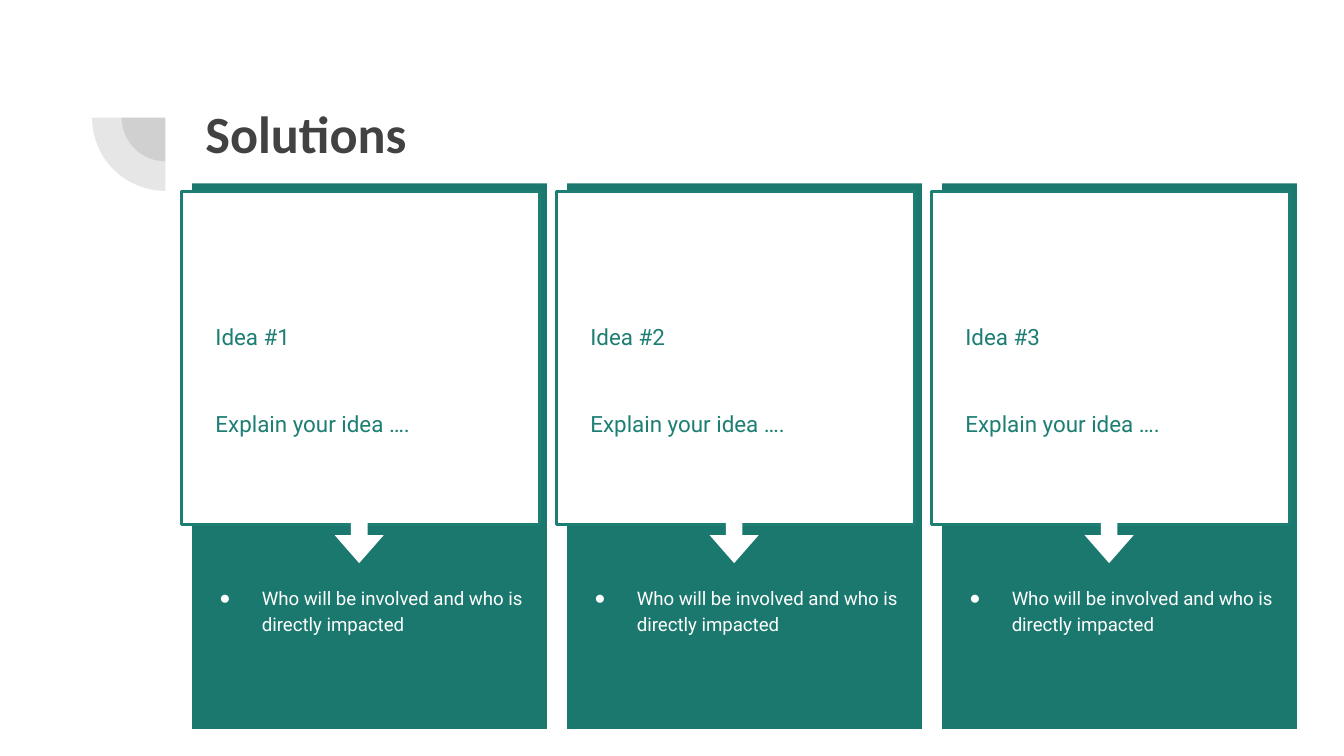
from lxml import etree
from pptx import Presentation
from pptx import util as u
from pptx.dml.color import RGBColor
from pptx.enum import shapes, text
from pptx.oxml.ns import qn

PX = 4572  # EMU per px, 200 px to the inch
COLORS = {"ink": "424242", "panel": "1B786E", "accent": "1D7E74", "white": "FFFFFF"}
KIND = shapes.MSO_SHAPE

deck = Presentation()
deck.slide_width, deck.slide_height = 2000 * PX, 1125 * PX
slide = deck.slides.add_slide(deck.slide_layouts[6])


def add_block(kind, box, fill, border=None, adjustments=()):
    block = slide.shapes.add_shape(kind, *(n * PX for n in box))
    block.shadow.inherit = False
    block.fill.solid()
    block.fill.fore_color.rgb = RGBColor.from_string(COLORS[fill])
    if border:
        block.line.color.rgb = RGBColor.from_string(COLORS[border])
        block.line.width = u.Pt(1.5)
    else:
        block.line.fill.background()
    for i, value in enumerate(adjustments):
        block.adjustments[i] = value
    return block


def add_words(words, box, color, spacing=1.0, **font):
    """Add a wrapped, top-anchored text box and return its paragraph."""
    frame = slide.shapes.add_textbox(*(n * PX for n in box)).text_frame
    frame.word_wrap = True
    frame.vertical_anchor = text.MSO_ANCHOR.TOP
    for side in ("left", "top", "right", "bottom"):
        setattr(frame, f"margin_{side}", 20 * PX)
    paragraph = frame.paragraphs[0]
    paragraph.line_spacing = spacing
    run = paragraph.add_run()
    run.text = words
    run.font.color.rgb = RGBColor.from_string(COLORS[color])
    for key, value in font.items():
        setattr(run.font, key, value)
    return paragraph


# Two translucent quarter circles around one centre (angles in units of 5/3 degree)
for left, top, size in ((181, 110, 130), (137, 66, 218)):
    quarter = add_block(KIND.PIE, (left, top, size, size), "ink", adjustments=(54, 108))
    fill_color = quarter._element.spPr.find(qn("a:solidFill"))[0]
    etree.SubElement(fill_color, qn("a:alpha"), val="13000")

add_words("Solutions", (286, 130, 1538, 218), "ink", name="Calibri", size=u.Pt(28), bold=True)

idea_font = {"name": "Roboto", "size": u.Pt(12)}
impact_font = {"name": "Roboto", "size": u.Pt(10)}
for number in range(1, 4):
    x = 270 + 558 * (number - 1)
    add_block(KIND.RECTANGLE, (x + 16, 273, 528, 812), "panel")
    add_block(KIND.RECTANGLE, (x, 285, 533, 496), "white", border="accent")
    add_words(f"Idea #{number}", (x + 31, 461, 472, 122), "accent", **idea_font)
    add_words("Explain your idea ….", (x + 31, 584, 472, 166), "accent", 1.15, **idea_font)
    add_block(KIND.DOWN_ARROW, (x + 228, 760, 73, 78), "white", adjustments=(0.34, 0.57))

    impact = add_words("Who will be involved and who is directly impacted",
                       (x, 849, 528, 216), "white", 1.15, **impact_font)
    props = impact._p.get_or_add_pPr()
    props.set("marL", str(100 * PX))
    props.set("indent", str(-63 * PX))
    bullet_color = etree.SubElement(props, qn("a:buClr"))
    etree.SubElement(bullet_color, qn("a:srgbClr"), val=COLORS["white"])
    etree.SubElement(props, qn("a:buFont"), typeface="Arial")
    etree.SubElement(props, qn("a:buChar"), char="●")

deck.save("out.pptx")
